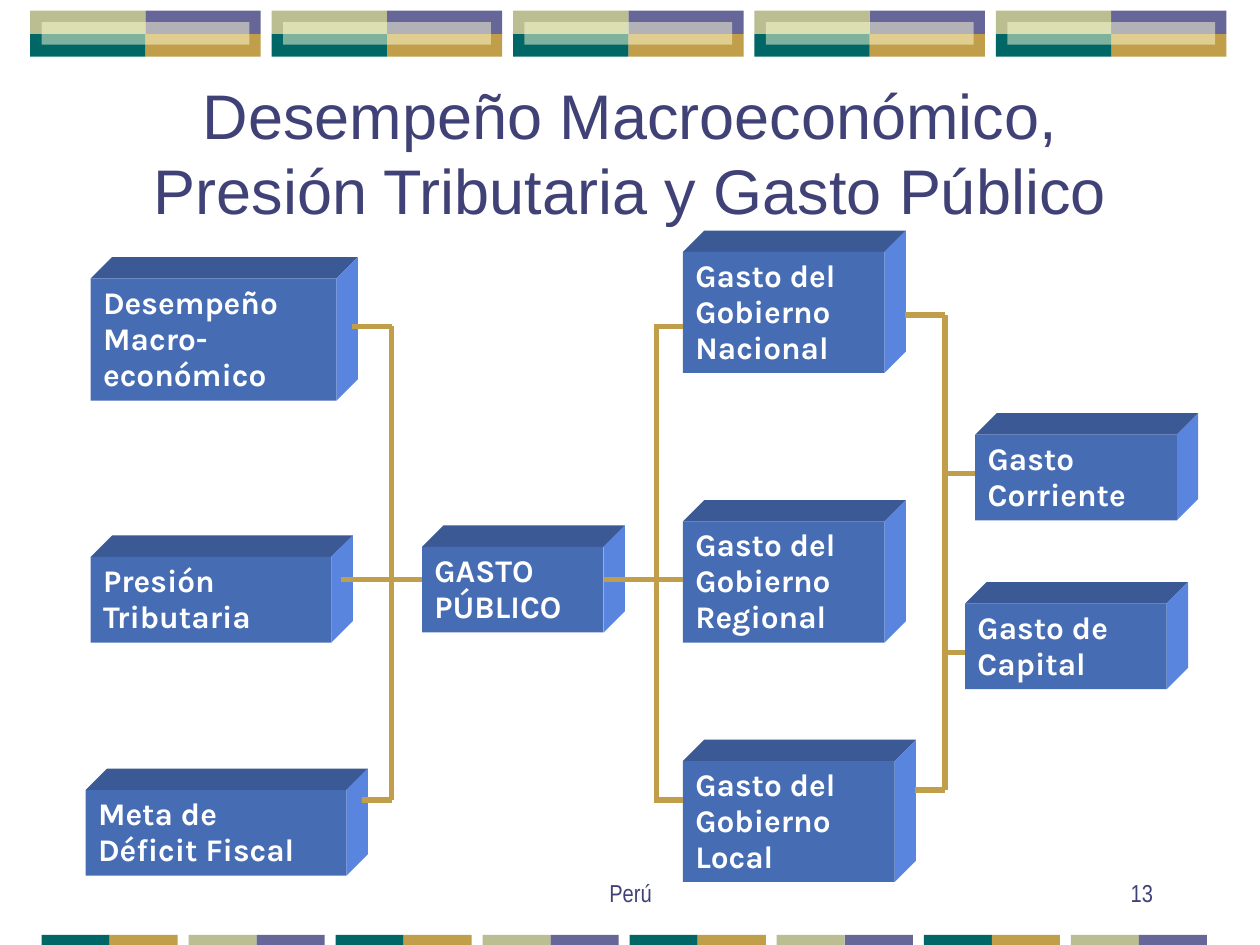
from lxml import etree
from pptx import Presentation
from pptx.dml.color import RGBColor
from pptx.enum import shapes, text
from pptx.oxml.ns import qn
from pptx.util import Inches, Pt


def paint(color_format, color):
    color_format.rgb = RGBColor.from_string(color)


def style(shape, color):
    shape.shadow.inherit = False
    shape.fill.solid()
    paint(shape.fill.fore_color, color)
    shape.line.fill.background()


GREEN, GOLD, PURPLE, OLIVE, NAVY = "006666", "C09E4A", "666699", "BABE90", "404176"
DEPTH = 0.17

deck = Presentation()
deck.slide_width, deck.slide_height = Inches(10), Inches(7.5)
page = deck.slides.add_slide(deck.slide_layouts[6])

tiles = []
for index in range(5):
    left = 0.24 + index * 1.916
    tiles += [
        (left + 0.915, 0.085, 0.915, 0.185, PURPLE),
        (left + 0.915, 0.27, 0.915, 0.18, GOLD),
        (left, 0.27, 0.915, 0.18, GREEN),
        (left, 0.085, 0.915, 0.185, OLIVE),
        (left + 0.09, 0.175, 1.65, 0.18, "FEFED6"),
    ]
for index in range(8):
    left = 0.33 + index * 1.167
    pair = (OLIVE, PURPLE) if index % 2 else (GREEN, GOLD)
    for side, color in enumerate(pair):
        tiles.append((left + side * 0.54, 7.42, 0.54, 0.08, color))
for left, top, width, height, color in tiles:
    tile = page.shapes.add_shape(
        shapes.MSO_SHAPE.RECTANGLE, Inches(left), Inches(top), Inches(width), Inches(height))
    style(tile, color)
    if color == "FEFED6":
        fill_color = tile.fill._xPr.find(qn("a:solidFill"))[0]
        etree.SubElement(fill_color, qn("a:alpha")).set("val", "50000")

labels = [
    ("Desempeño Macroeconómico, Presión Tributaria y Gasto Público",
     0.75, 0.58, 8.5, 1.25, 36, "Arial", text.PP_ALIGN.CENTER, text.MSO_ANCHOR.MIDDLE),
    ("Perú", 3.42, 6.75, 3.17, 0.5, 14, "Arial Narrow",
     text.PP_ALIGN.CENTER, text.MSO_ANCHOR.BOTTOM),
    ("13", 7.17, 6.75, 2.08, 0.5, 14, "Arial Narrow",
     text.PP_ALIGN.RIGHT, text.MSO_ANCHOR.BOTTOM),
]
for words, left, top, width, height, size, font, align, anchor in labels:
    box = page.shapes.add_textbox(Inches(left), Inches(top), Inches(width), Inches(height))
    frame = box.text_frame
    frame.word_wrap = True
    frame.vertical_anchor = anchor
    frame.text = words
    para = frame.paragraphs[0]
    para.alignment = align
    span = para.runs[0]
    span.font.size, span.font.name = Pt(size), font
    paint(span.font.color, NAVY)

blocks = [
    ("Desempeño Macro-económico", 0.72, 2.21, 1.95, 0.97),
    ("Presión Tributaria", 0.72, 4.42, 1.91, 0.68),
    ("Meta de\nDéficit Fiscal", 0.68, 6.27, 2.07, 0.68),
    ("GASTO\nPÚBLICO", 3.35, 4.34, 1.44, 0.68),
    ("Gasto del Gobierno Nacional", 5.42, 2, 1.6, 0.96),
    ("Gasto del Gobierno Regional", 5.42, 4.14, 1.6, 0.96),
    ("Gasto del Gobierno Local", 5.42, 6.04, 1.68, 0.96),
    ("Gasto Corriente", 7.74, 3.45, 1.6, 0.68),
    ("Gasto de Capital", 7.66, 4.79, 1.6, 0.68),
]
for words, left, top, width, height in blocks:
    right, bottom = left + width, top + height
    back = (right + DEPTH, top - DEPTH)
    faces = [
        ("3B5994", [(left, top), (left + DEPTH, top - DEPTH), back, (right, top)]),
        ("5985DE", [(right, top), back, (right + DEPTH, bottom - DEPTH), (right, bottom)]),
    ]
    for color, corners in faces:
        points = [(Inches(x), Inches(y)) for x, y in corners]
        builder = page.shapes.build_freeform(*points[0])
        builder.add_line_segments(points[1:], close=True)
        style(builder.convert_to_shape(), color)
    front = page.shapes.add_shape(
        shapes.MSO_SHAPE.RECTANGLE, Inches(left), Inches(top), Inches(width), Inches(height))
    style(front, "466CB4")
    frame = front.text_frame
    frame.word_wrap = True
    frame.vertical_anchor = text.MSO_ANCHOR.MIDDLE
    frame.text = words
    for para in frame.paragraphs:
        para.alignment = text.PP_ALIGN.LEFT
        para.line_spacing = 0.95
        span = para.runs[0]
        span.font.size, span.font.name, span.font.bold = Pt(18), "Karla", True
        paint(span.font.color, "FFFFFF")

links = [
    (3.11, 2.59, 3.11, 6.35), (2.71, 4.6, 3.35, 4.6),
    (3.11, 2.59, 2.79, 2.59), (3.11, 6.35, 2.87, 6.35),
    (5.21, 2.59, 5.21, 6.35), (4.79, 4.6, 5.42, 4.6),
    (5.42, 6.35, 5.19, 6.35), (5.19, 2.59, 5.42, 2.59),
    (7.5, 2.5, 7.5, 6.27), (7.5, 2.5, 7.18, 2.5), (7.5, 6.27, 7.26, 6.27),
    (7.5, 3.76, 7.74, 3.76), (7.5, 5.18, 7.66, 5.18),
]
for ends in links:
    link = page.shapes.add_connector(
        shapes.MSO_CONNECTOR.STRAIGHT, *[Inches(value) for value in ends])
    link.line.width = Pt(3)
    paint(link.line.color, GOLD)
    etree.SubElement(link._element.spPr, qn("a:effectLst"))

deck.save("out.pptx")
